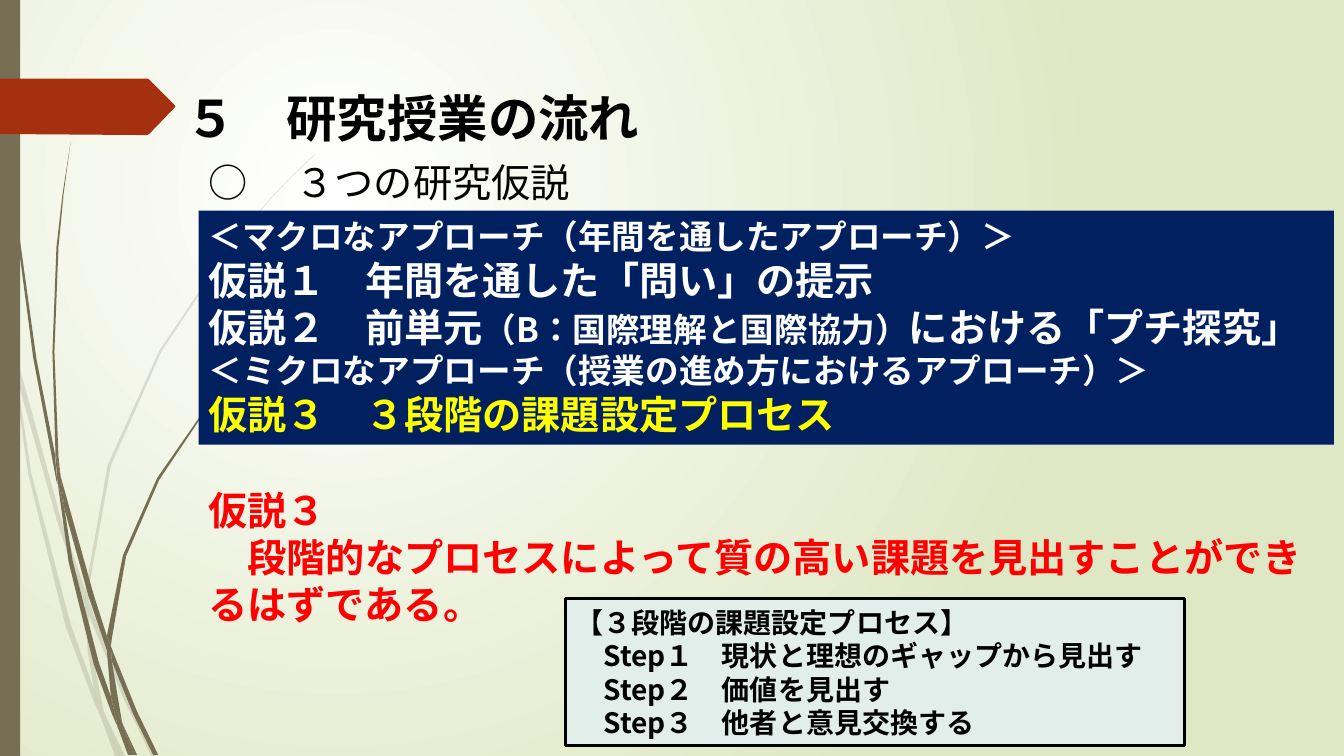
from pptx import Presentation
from pptx import util as u
from pptx.dml import color
from pptx.enum import lang, shapes, text
from pptx.oxml import ns, xmlchemy

RGB = color.RGBColor
BLACK = RGB(0, 0, 0)
WHITE = RGB(255, 255, 255)
RED = RGB(255, 0, 0)
YELLOW = RGB(255, 255, 0)
NAVY = RGB(0x00, 0x20, 0x60)
MINT = RGB(0xE1, 0xEE, 0xE9)
LIME = RGB(0xDF, 0xE8, 0xC4)
OLIVE = RGB(0x76, 0x6F, 0x54)
RUST = RGB(0xA5, 0x30, 0x10)
NOTO = "Noto Sans CJK JP"
ADVENTOR = "TeX Gyre Adventor"

FLAG = [(1.74, 1.06), (1.48, 1.33), (1.46, 1.34), (1.36, 1.34), (0, 1.33),
        (0, .78), (1.36, .78), (1.46, .78), (1.48, .79), (1.73, 1.04)]
FAINT = [
    [(.11, 3.5), (.09, 3.22), (0, 2.82), (0, 2.99), (.1, 3.44)],
    [(.58, 5.22), (.84, 5.99), (.85, 5.86), (.62, 5.2), (.14, 3.45), (.17, 3.76)],
    [(.92, 6.07), (.88, 5.96), (.88, 6.1), (1.23, 6.94), (1.5, 7.5), (1.55, 7.5),
     (1.27, 6.92)],
    [(1.19, 7.5), (1.24, 7.5), (1.05, 7.11)],
    [(.93, 6.83), (.7, 6.19), (.31, 4.69), (.17, 3.76), (.11, 3.5), (.28, 4.7),
     (.65, 6.21), (.92, 6.93), (1.01, 7.14), (.99, 7.07)],
    [(.84, 5.99), (.87, 6.46), (.93, 6.83), (.96, 6.92), (1.05, 7.11), (1.03, 7.06),
     (.91, 6.46), (.88, 6.1), (.88, 6.08)],
    [(.88, 5.84), (1.1, 4.62), (1.6, 3.49), (2.29, 2.45), (2.68, 1.98), (2.9, 1.75),
     (3.12, 1.54), (3.12, 1.53), (2.89, 1.75), (2.68, 1.97), (2.28, 2.44), (1.58, 3.48),
     (1.07, 4.61), (.85, 5.84), (.85, 5.86), (.88, 5.96)],
    [(1.01, 7.14), (1.14, 7.5), (1.19, 7.5)],
    [(.88, 6.08), (.88, 6.1), (.88, 5.96), (.85, 5.86), (.84, 5.99)],
    [(.96, 6.92), (.93, 6.83), (.99, 7.07), (1.01, 7.14), (1.19, 7.5), (1.05, 7.11)],
]
SOLID = [
    [(.07, 1.1), (.17, 2.33), (.33, 3.55), (.56, 4.77), (.57, 4.81), (.55, 4.57),
     (.55, 4.53), (.36, 3.55), (.19, 2.32), (.08, 1.09), (.05, .48), (.04, 0),
     (.03, 0), (.04, .48)],
    [(.88, 5.92), (1.06, 6.45), (1.06, 6.31), (.93, 5.9), (.6, 4.72), (.64, 5.05)],
    [(1.13, 6.49), (1.1, 6.41), (1.11, 6.56), (1.32, 7.08), (1.52, 7.49), (1.57, 7.49),
     (1.36, 7.06)],
    [(1.1, 6.91), (.98, 6.57), (.72, 5.56), (.64, 5.05), (.57, 4.77), (.68, 5.57),
     (.93, 6.59), (1.11, 7.08), (1.17, 7.22), (1.16, 7.17)],
    [(.6, 4.72), (.58, 4.53), (.54, 3.49), (.58, 2.45), (.63, 1.93), (.7, 1.41),
     (.62, 1.93), (.56, 2.45), (.52, 3.49), (.55, 4.49)],
    [(1.33, 7.49), (1.36, 7.49), (1.22, 7.19)],
    [(.57, 4.77), (.64, 5.05), (.6, 4.72), (.55, 4.49), (.55, 4.53)],
    [(1.11, 6.33), (1.25, 5.52), (1.58, 4.76), (2.05, 4.06), (2.31, 3.74), (2.45, 3.59),
     (2.61, 3.44), (2.6, 3.44), (2.45, 3.58), (2.31, 3.73), (2.04, 4.05), (1.56, 4.74),
     (1.22, 5.51), (1.06, 6.31), (1.1, 6.41)],
    [(1.17, 7.22), (1.27, 7.49), (1.31, 7.49)],
    [(1.06, 6.45), (1.1, 6.91), (1.16, 7.06), (1.22, 7.19), (1.21, 7.16), (1.11, 6.56),
     (1.09, 6.51)],
    [(1.06, 6.45), (1.09, 6.51), (1.11, 6.56), (1.1, 6.41), (1.06, 6.31)],
    [(1.16, 7.06), (1.1, 6.91), (1.16, 7.17), (1.17, 7.22), (1.3, 7.49), (1.33, 7.49),
     (1.22, 7.19)],
]


def paint(shape, fill, edge=None):
    shape.shadow.inherit = False
    shape.fill.solid()
    shape.fill.fore_color.rgb = fill
    if edge:
        shape.line.color.rgb = edge
        shape.line.width = u.Pt(2.25)
    else:
        shape.line.fill.background()


def carve(slide, spot, knots, fill, alpha=None):
    rim = [(u.Inches(spot[0] + x), u.Inches(spot[1] + y)) for x, y in knots]
    form = slide.shapes.build_freeform(*rim[0])
    form.add_line_segments(rim[1:], close=True)
    leaf = form.convert_to_shape()
    paint(leaf, fill)
    if alpha:
        tone = leaf.element.spPr.find(ns.qn("a:solidFill"))[0]
        node = xmlchemy.OxmlElement("a:alpha")
        node.set("val", str(alpha * 1000))
        tone.append(node)


def block(slide, box, fill, edge=None):
    shape = slide.shapes.add_shape(shapes.MSO_SHAPE.RECTANGLE, *map(u.Inches, box))
    paint(shape, fill, edge)
    return shape


def write(shape, rows, anchor=text.MSO_ANCHOR.TOP):
    frame = shape.text_frame
    look = {"word_wrap": True, "auto_size": text.MSO_AUTO_SIZE.NONE,
            "vertical_anchor": anchor}
    for key, val in look.items():
        setattr(frame, key, val)
    for i, row in enumerate(rows):
        para = frame.add_paragraph() if i else frame.paragraphs[0]
        para.alignment = text.PP_ALIGN.LEFT
        para.line_spacing = u.Pt(1.2 * max(run[1] for run in row))
        for words, size, tone, bold, face in row:
            run = para.add_run()
            run.text = words
            style = {"size": u.Pt(size), "bold": bold, "name": face,
                     "language_id": lang.MSO_LANGUAGE_ID.JAPANESE}
            for key, val in style.items():
                setattr(run.font, key, val)
            run.font.color.rgb = tone
            east = xmlchemy.OxmlElement("a:ea")
            east.set("typeface", NOTO)
            run.font._element.append(east)


def scene(slide, box):
    x, y, w, h = box
    fill = slide.background.fill
    fill.gradient()
    for stop, tone, spot in zip(fill.gradient_stops, (WHITE, LIME), (0, 1)):
        stop.color.rgb = tone
        stop.position = spot
    lin = next(slide.element.iter(ns.qn("a:lin")))
    ring = xmlchemy.OxmlElement("a:path")
    ring.set("path", "circle")
    rect = xmlchemy.OxmlElement("a:fillToRect")
    for key, val in {"l": 50, "t": 50, "r": 100, "b": 100}.items():
        rect.set(key, str(val * 1000))
    ring.append(rect)
    lin.getparent().replace(lin, ring)
    for knots in FAINT:
        carve(slide, (x, y), knots, OLIVE, 20)
    for knots in SOLID:
        carve(slide, (x, y), knots, OLIVE)
    block(slide, (x, y, .2, h), OLIVE)
    carve(slide, (x, y), FLAG, RUST)


def head(slide, box):
    title = slide.shapes.title
    for key, val in zip(("left", "top", "width", "height"), box):
        setattr(title, key, u.Inches(val))
    write(title, [[("５　研究授業の流れ", 36, BLACK, True, ADVENTOR)]],
          text.MSO_ANCHOR.MIDDLE)


def note(slide, box, rows):
    write(slide.shapes.add_textbox(*map(u.Inches, box)), rows)


def plan(slide, box):
    def big(words, tone=WHITE):
        return words, 28, tone, True, NOTO

    def small(words, face=NOTO):
        return words, 24, WHITE, True, face

    write(block(slide, box, NAVY), [
        [small("＜マクロなアプローチ（年間を通したアプローチ）＞")],
        [big("仮説１　年間を通した「問い」の提示")],
        [big("仮説２　前単元"), small("（B："), small("国際理解と国際協力", ADVENTOR),
         small("）"), big("における「プチ探究」")],
        [small("＜ミクロなアプローチ（授業の進め方におけるアプローチ）＞")],
        [big("仮説３　３段階の課題設定プロセス", YELLOW)],
    ])


def steps(slide, box):
    lines = ["【３段階の課題設定プロセス】", "　Step１　現状と理想のギャップから見出す",
             "　Step２　価値を見出す", "　Step３　他者と意見交換する"]
    write(block(slide, box, MINT, BLACK),
          [[(line, 20, BLACK, True, NOTO)] for line in lines], text.MSO_ANCHOR.MIDDLE)


def main():
    deck = Presentation()
    deck.slide_width, deck.slide_height = u.Inches(13.33), u.Inches(7.5)
    slide = deck.slides.add_slide(deck.slide_layouts[5])
    scene(slide, (0, 0, 13.33, 7.5))
    note(slide, (1.97, 4.78, 11.26, 1.51), [
        [("仮説３", 28, RED, True, "Arial")],
        [("　段階的なプロセスによって質の高い課題を見出すことができるはずである。",
          28, RED, True, NOTO)],
    ])
    head(slide, (1.74, .8, 9.4, .72))
    note(slide, (1.97, 1.52, 11.06, .57),
         [[("○　 ３つの研究仮説", 28, BLACK, False, "Arial")]])
    plan(slide, (1.97, 2.09, 11.26, 2.32))
    steps(slide, (5.61, 5.94, 6.14, 1.46))
    deck.save("out.pptx")


if __name__ == "__main__":
    main()
